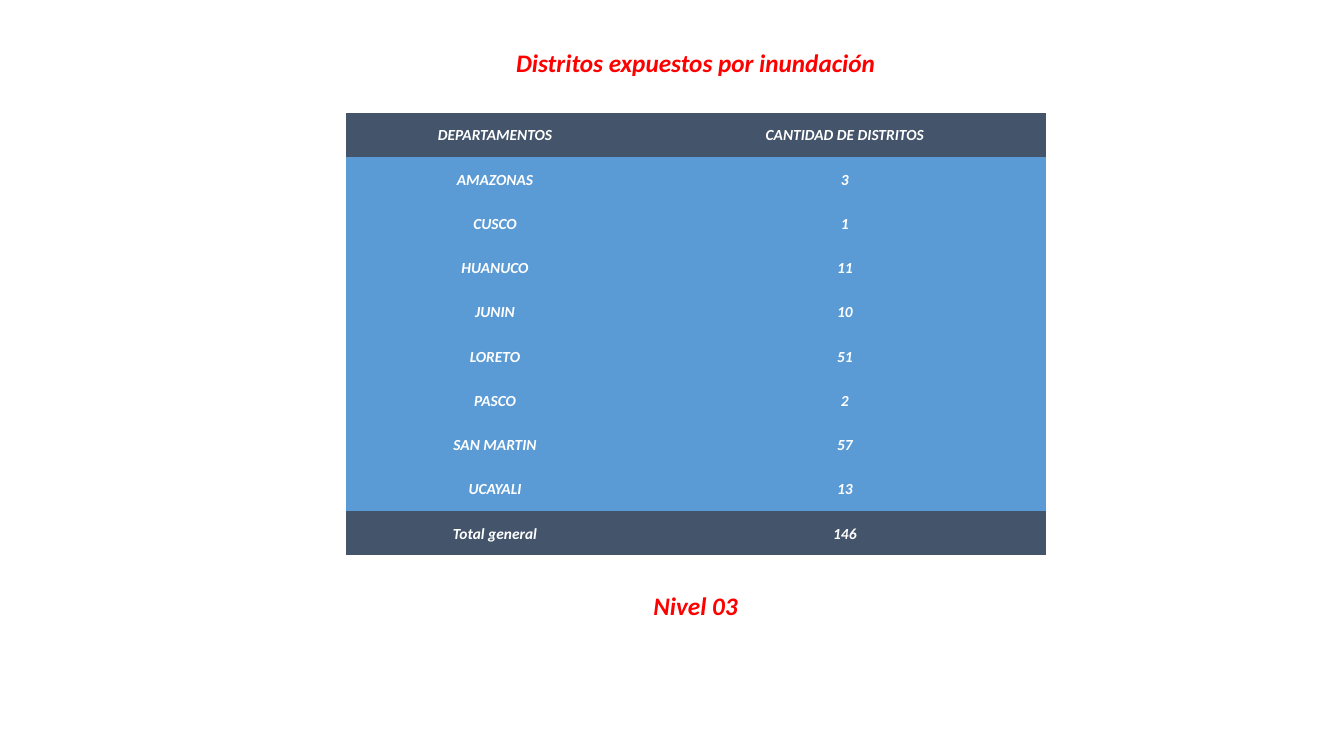
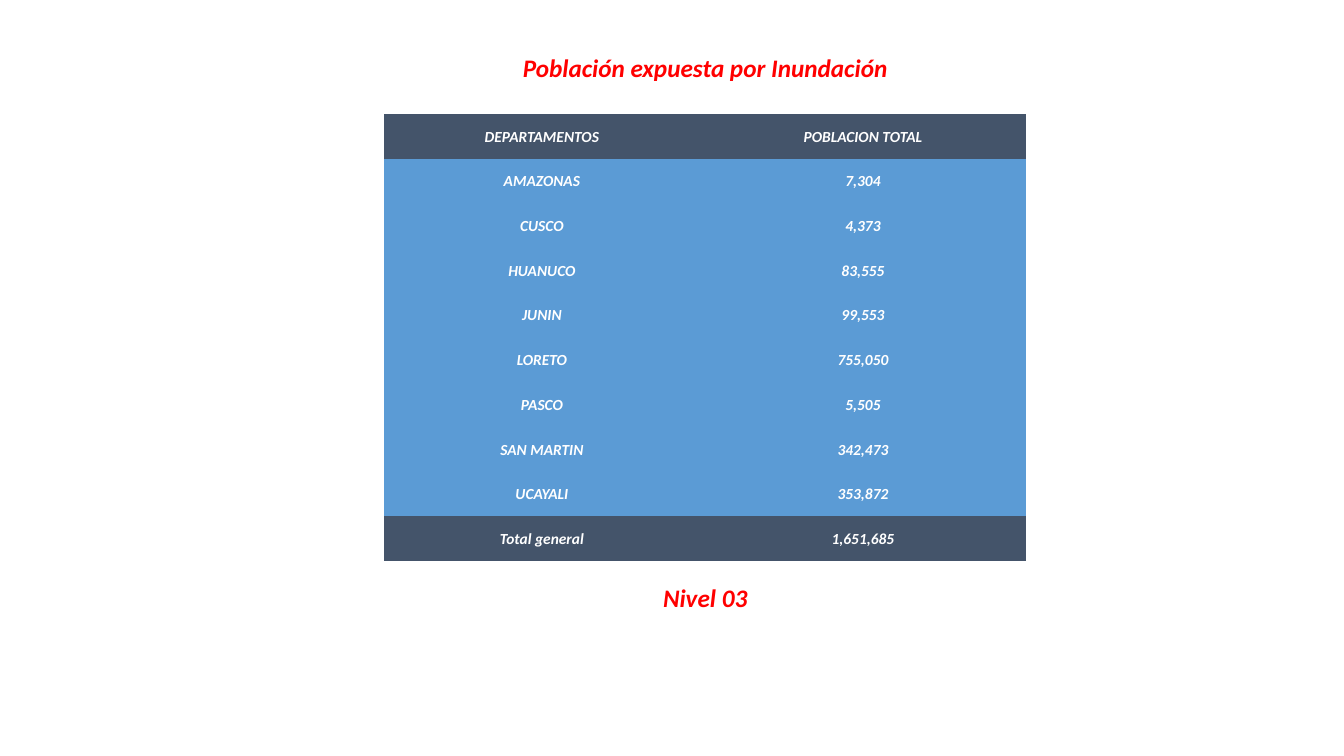
from pptx import Presentation
from pptx.dml.color import RGBColor
from pptx.enum.text import MSO_ANCHOR as Anchor, MSO_AUTO_SIZE as Fit, PP_ALIGN as Align
from pptx.util import Inches, Pt

# Shared look
FONT = "Calibri"
RED, WHITE, DARK, BLUE = "FF0000", "FFFFFF", "44546A", "5B9BD5"
PLAIN = "{2D5ABB26-0587-4C30-8999-92F81FD0307C}"  # table style without grid
LINE = 0.4  # height of the red lines


def color(hex_code):
    return RGBColor.from_string(hex_code)


def write(frame, text, size=11, ink=WHITE, anchor=Anchor.MIDDLE, wrap=True):
    frame.word_wrap = wrap
    frame.vertical_anchor = anchor
    para = frame.paragraphs[0]
    para.alignment = Align.CENTER
    run = para.add_run()
    run.text = text
    font = run.font
    font.name, font.size = FONT, Pt(size)
    font.bold = font.italic = True
    font.color.rgb = color(ink)


# Content
places = ["AMAZONAS", "CUSCO", "HUANUCO", "JUNIN", "LORETO", "PASCO",
          "SAN MARTIN", "UCAYALI", "Total general"]
pages = [
    dict(title="Distritos expuestos por inundación", head="CANTIDAD DE DISTRITOS",
         values=["3", "1", "11", "10", "51", "2", "57", "13", "146"],
         left=3.43, top=1.12, cols=[2.96, 3.98], height=4.39,
         title_top=0.42, title_width=3.8, level_top=5.81),
    dict(title="Población expuesta por Inundación", head="POBLACION TOTAL",
         values=["7,304", "4,373", "83,555", "99,553", "755,050", "5,505",
                 "342,473", "353,872", "1,651,685"],
         left=3.81, top=1.13, cols=[3.13, 3.24], height=4.44,
         title_top=0.47, title_width=3.85, level_top=5.73),
]

deck = Presentation()
deck.slide_width, deck.slide_height = Inches(13.33), Inches(7.5)

for page in pages:
    slide = deck.slides.add_slide(deck.slide_layouts[5])
    width = sum(page["cols"])
    center = page["left"] + width / 2

    # Title above the table
    title = slide.shapes.title
    title.left = Inches(center - page["title_width"] / 2)
    title.top = Inches(page["title_top"])
    title.width, title.height = Inches(page["title_width"]), Inches(LINE)
    title.text_frame.auto_size = Fit.NONE
    write(title.text_frame, page["title"], size=18, ink=RED, anchor=Anchor.TOP, wrap=False)

    # Level below the table
    level = slide.shapes.add_textbox(Inches(center - 0.6), Inches(page["level_top"]),
                                     Inches(1.2), Inches(LINE))
    write(level.text_frame, "Nivel 03", size=18, ink=RED, anchor=Anchor.TOP)

    # Table with dark first and last rows
    rows = [("DEPARTAMENTOS", page["head"]), *zip(places, page["values"])]
    holder = slide.shapes.add_table(len(rows), 2, Inches(page["left"]), Inches(page["top"]),
                                    Inches(width), Inches(page["height"]))
    holder.element.xpath(".//a:tableStyleId")[0].text = PLAIN
    table = holder.table
    table.horz_banding = False
    for col, size in zip(table.columns, page["cols"]):
        col.width = Inches(size)
    for r, row in enumerate(rows):
        table.rows[r].height = Inches(page["height"] / len(rows))
        for c, text in enumerate(row):
            cell = table.cell(r, c)
            cell.fill.solid()
            cell.fill.fore_color.rgb = color(DARK if r in (0, len(rows) - 1) else BLUE)
            cell.margin_left = cell.margin_right = cell.margin_top = Inches(0.01)
            cell.margin_bottom = 0
            cell.vertical_anchor = Anchor.MIDDLE
            write(cell.text_frame, text)

deck.save("out.pptx")
